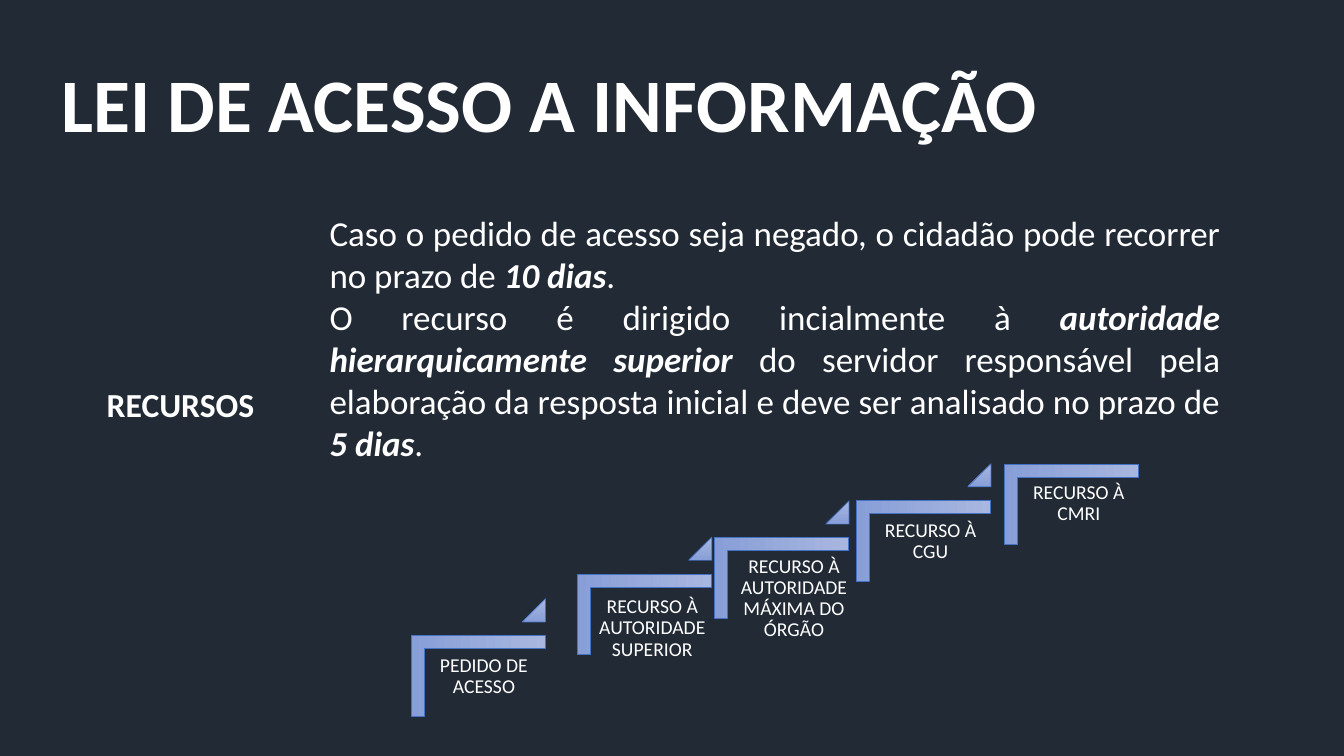
"""Slide on appeals under the access to information law, with a staircase of instances."""
from pptx import Presentation
from pptx.dml.color import RGBColor
from pptx.enum.shapes import MSO_SHAPE
from pptx.enum.text import MSO_ANCHOR, MSO_AUTO_SIZE, PP_ALIGN
from pptx.util import Inches, Pt

COLORS = {"background": "222A35", "text": "FFFFFF", "light": "A8B7DF",
          "dark": "889ED7", "line": "4472C4"}


def add_run(p, text, size, bold=False, italic=False):
    r = p.add_run()
    r.text = text
    r.font.name, r.font.size = "Calibri", Pt(size)
    r.font.bold, r.font.italic = bold, italic
    r.font.color.rgb = RGBColor.from_string(COLORS["text"])


def add_step_shape(kind, x, y, w, h, adjustments, rotation=0):
    sp = s.shapes.add_shape(kind, Inches(x), Inches(y), Inches(w), Inches(h))
    sp.rotation = rotation
    sp.shadow.inherit = False
    for i, value in enumerate(adjustments):
        sp.adjustments[i] = value
    sp.fill.gradient()
    sp.fill.gradient_angle = 270
    for stop, name in zip(sp.fill.gradient_stops, ("light", "dark")):
        stop.color.rgb = RGBColor.from_string(COLORS[name])
        stop.position = 0 if name == "light" else 1
    sp.line.color.rgb = RGBColor.from_string(COLORS["line"])
    sp.line.width = Pt(0.5)


prs = Presentation()
prs.slide_width, prs.slide_height = Inches(13.33), Inches(7.5)
s = prs.slides.add_slide(prs.slide_layouts[5])
s.background.fill.solid()
s.background.fill.fore_color.rgb = RGBColor.from_string(COLORS["background"])

title = s.shapes.title
title.left, title.top = Inches(0.51), Inches(0.51)
title.width, title.height = Inches(12.54), Inches(1.13)
tf = title.text_frame
tf.vertical_anchor = MSO_ANCHOR.MIDDLE
p = tf.paragraphs[0]
p.alignment, p.line_spacing = PP_ALIGN.LEFT, 0.9
add_run(p, "LEI DE ACESSO A INFORMAÇÃO", 54, bold=True)

label = s.shapes.add_textbox(Inches(0.96), Inches(3.76), Inches(1.68), Inches(0.5))
label.text_frame.word_wrap = False
add_run(label.text_frame.paragraphs[0], "RECURSOS", 24, bold=True)

body = s.shapes.add_textbox(Inches(3.17), Inches(2.05), Inches(9.03), Inches(3.03))
tf = body.text_frame
tf.word_wrap, tf.auto_size = True, MSO_AUTO_SIZE.SHAPE_TO_FIT_TEXT
paragraphs = [
    [("Caso o pedido de acesso seja negado, o cidadão pode recorrer no prazo de ", False),
     ("10 dias", True), (". ", False)],
    [("O recurso é dirigido incialmente à ", False),
     ("autoridade hierarquicamente superior ", True),
     ("do servidor responsável pela elaboração da resposta inicial "
      "e deve ser analisado no prazo de ", False),
     ("5 dias", True), (".", False)],
]
for i, runs in enumerate(paragraphs):
    p = tf.add_paragraph() if i else tf.paragraphs[0]
    p.alignment = PP_ALIGN.JUSTIFY
    for text, strong in runs:
        add_run(p, text, 25, bold=strong, italic=strong)

steps = [
    ("PEDIDO DE ACESSO", 4.34, 6.04, 4.2, 6.44, 1.2, 1.06),
    ("RECURSO À AUTORIDADE SUPERIOR", 5.99, 5.43, 5.56, 5.86, 1.82, 1.55),
    ("RECURSO À AUTORIDADE MÁXIMA DO ÓRGÃO", 7.35, 5.07, 7.08, 5.46, 1.59, 1.06),
    ("RECURSO À CGU", 8.76, 4.7, 8.63, 5.1, 1.2, 1.06),
    ("RECURSO À CMRI", 10.23, 4.34, 10.1, 4.73, 1.2, 1.06),
]
for text, x, y, text_x, text_y, text_w, text_h in steps:
    add_step_shape(MSO_SHAPE.CORNER, x, y, 0.8, 1.33, (0.161, 0.161), rotation=90)
    box = s.shapes.add_textbox(Inches(text_x), Inches(text_y), Inches(text_w), Inches(text_h))
    tf = box.text_frame
    tf.word_wrap = True
    tf.margin_left = tf.margin_right = tf.margin_top = tf.margin_bottom = Inches(0.06)
    p = tf.paragraphs[0]
    p.alignment, p.line_spacing = PP_ALIGN.CENTER, 0.9
    add_run(p, text, 14)
    if text != steps[-1][0]:
        add_step_shape(MSO_SHAPE.ISOSCELES_TRIANGLE, x + 0.84, y - 0.1, 0.23, 0.23, (1,))

prs.save("out.pptx")
